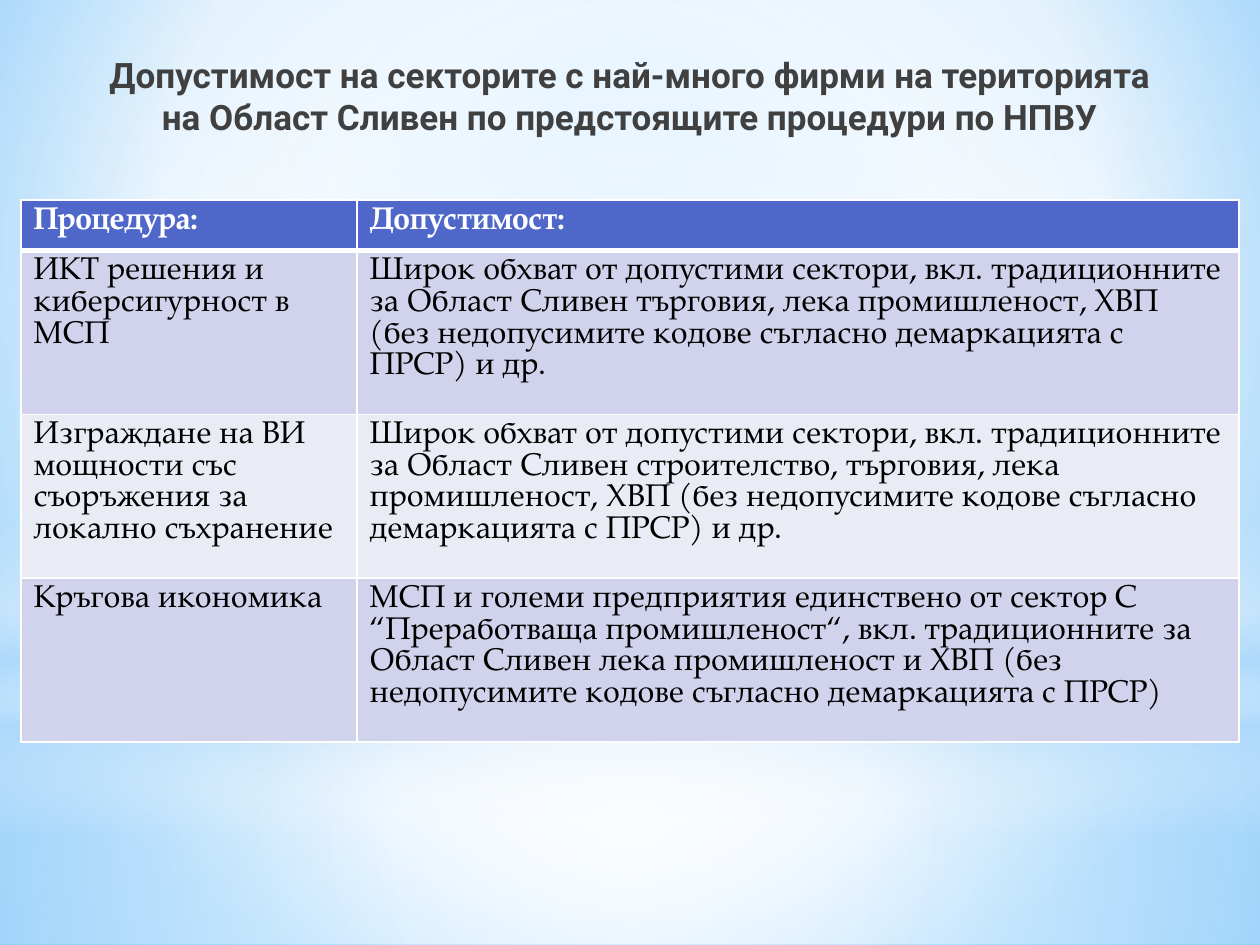
import pptx
import pptx.util
import pptx.oxml
import pptx.oxml.ns
import pptx.dml.color
import pptx.enum.shapes
import pptx.enum.text
from dataclasses import dataclass

Pt = pptx.util.Pt
qn = pptx.oxml.ns.qn
SHAPE = pptx.enum.shapes.MSO_SHAPE
CENTER = pptx.enum.text.PP_ALIGN.CENTER


@dataclass(frozen=True)
class Theme:
    title_font: str = "Roboto"
    body_font: str = "TeX Gyre Pagella"
    title_size: float = 20
    table_size: float = 18
    table_leading: float = 18.1
    title: str = "404040"
    white: str = "FFFFFF"
    text: str = "000000"
    header: str = "4E67C8"
    bands: tuple = ("D0D3EB", "E9EBF5")


THEME = Theme()
SLIDE = (720, 540)

TITLE = ("Допустимост на секторите с най-много фирми на територията "
         "на Област Сливен по предстоящите процедури по НПВУ")
ROWS = [
    ("Процедура:", "Допустимост:"),
    ("ИКТ решения и киберсигурност в МСП",
     "Широк обхват от допустими сектори, вкл. традиционните за Област Сливен "
     "търговия, лека промишленост, ХВП (без недопусимите кодове съгласно "
     "демаркацията с ПРСР) и др."),
    ("Изграждане на ВИ мощности със съоръжения за локално съхранение",
     "Широк обхват от допустими сектори, вкл. традиционните за Област Сливен "
     "строителство, търговия, лека промишленост, ХВП (без недопусимите кодове "
     "съгласно демаркацията с ПРСР) и др."),
    ("Кръгова икономика",
     "МСП и големи предприятия единствено от сектор C “Преработваща "
     "промишленост“, вкл. традиционните за Област Сливен лека промишленост и "
     "ХВП (без недопусимите кодове съгласно демаркацията с ПРСР)"),
]
COLUMN_WIDTHS = (192, 504)
HEADER_HEIGHT, ROW_HEIGHT = 29, 93.6

# Gradient stops: position %, colour, opacity %. Centre: left, top, right, bottom %.
MIDDLE = (50, 50, 50, 50)
BACKGROUND = ([(0, "9ED5FF", 100), (60, "FFFFFF", 100), (100, "5BB9FF", 100)],
              (20, 10, 20, 60))
GLOWS = [
    (SHAPE.RECTANGLE, (0, 402, 720, 138),
     [(0, "FFFFFF", 91), (37, "FFFFFF", 76), (100, "B4DCFA", 79)], MIDDLE),
    (SHAPE.RECTANGLE, (0, 0, 720, 402),
     [(0, "FFFFFF", 89), (48, "FFFFFF", 62), (100, "B4DCFA", 79)], MIDDLE),
    (SHAPE.RECTANGLE, (0, 297, 720, 180),
     [(0, "FFFFFF", 0), (29, "FFFFFF", 30), (45, "B4DCFA", 40),
      (55, "FFFFFF", 26), (65, "B4DCFA", 60), (100, "FFFFFF", 0)], None),
    (SHAPE.OVAL, (0, 126, 720, 402),
     [(0, "FFFFFF", 100), (56, "FFFFFF", 0)], MIDDLE),
]


def rgb(value):
    return pptx.dml.color.RGBColor.from_string(value)


def set_gradient(owner, fill, stops, center):
    """Fill with a circular gradient, or a vertical one when center is None."""
    fill.solid()
    solid = owner.find(".//" + qn("a:solidFill"))
    stop_xml = "".join(
        f'<a:gs pos="{pos * 1000}"><a:srgbClr val="{color}">'
        f'<a:alpha val="{alpha * 1000}"/></a:srgbClr></a:gs>'
        for pos, color, alpha in stops)
    if center:
        sides = " ".join(f'{side}="{v * 1000}"' for side, v in zip("ltrb", center))
        direction = f'<a:path path="circle"><a:fillToRect {sides}/></a:path>'
    else:
        direction = '<a:lin ang="5400000" scaled="0"/>'
    gradient = pptx.oxml.parse_xml(
        f'<a:gradFill {pptx.oxml.ns.nsdecls("a")} rotWithShape="1">'
        f'<a:gsLst>{stop_xml}</a:gsLst>{direction}</a:gradFill>')
    solid.getparent().replace(solid, gradient)


def format_text(p, font, size, color, bold):
    for r in p.runs:
        r.font.name, r.font.size, r.font.bold = font, Pt(size), bold
        r.font.color.rgb = rgb(color)


def add_title(slide):
    tf = slide.shapes.add_textbox(*map(Pt, (48, 27, 624, 57))).text_frame
    tf.word_wrap = True
    p = tf.paragraphs[0]
    p.text = TITLE
    p.alignment = CENTER
    format_text(p, THEME.title_font, THEME.title_size, THEME.title, True)


def set_borders(cell, widths):
    """Draw white borders; widths are in points, by side letter."""
    tc_pr = cell._tc.get_or_add_tcPr()
    for i, side in enumerate("LRTB"):
        tc_pr.insert(i, pptx.oxml.parse_xml(
            f'<a:ln{side} {pptx.oxml.ns.nsdecls("a")} w="{Pt(widths[side])}">'
            f'<a:solidFill><a:srgbClr val="{THEME.white}"/></a:solidFill></a:ln{side}>'))


def add_procedures(slide):
    heights = [HEADER_HEIGHT] + [ROW_HEIGHT] * (len(ROWS) - 1)
    width = sum(COLUMN_WIDTHS)
    box = ((SLIDE[0] - width) / 2, 114.2, width, sum(heights))
    table = slide.shapes.add_table(
        len(ROWS), len(COLUMN_WIDTHS), *map(Pt, box)).table
    for column, w in zip(table.columns, COLUMN_WIDTHS):
        column.width = Pt(w)
    for i, (values, height) in enumerate(zip(ROWS, heights)):
        table.rows[i].height = Pt(height)
        is_header = i == 0
        fill = THEME.header if is_header else THEME.bands[(i - 1) % 2]
        color = THEME.white if is_header else THEME.text
        borders = {"L": 1, "R": 1, "T": 3 if i == 1 else 1, "B": 3 if is_header else 1}
        for j, value in enumerate(values):
            cell = table.cell(i, j)
            p = cell.text_frame.paragraphs[0]
            p.text = value
            p.line_spacing = Pt(THEME.table_leading)
            format_text(p, THEME.body_font, THEME.table_size, color, is_header)
            cell.fill.solid()
            cell.fill.fore_color.rgb = rgb(fill)
            set_borders(cell, borders)


def main():
    prs = pptx.Presentation()
    prs.slide_width, prs.slide_height = map(Pt, SLIDE)
    slide = prs.slides.add_slide(prs.slide_layouts[6])
    set_gradient(slide.element, slide.background.fill, *BACKGROUND)
    for kind, box, stops, center in GLOWS:
        sp = slide.shapes.add_shape(kind, *map(Pt, box))
        sp.shadow.inherit = False
        sp.line.fill.background()
        set_gradient(sp.element, sp.fill, stops, center)
    add_title(slide)
    add_procedures(slide)
    prs.save("out.pptx")


if __name__ == "__main__":
    main()
